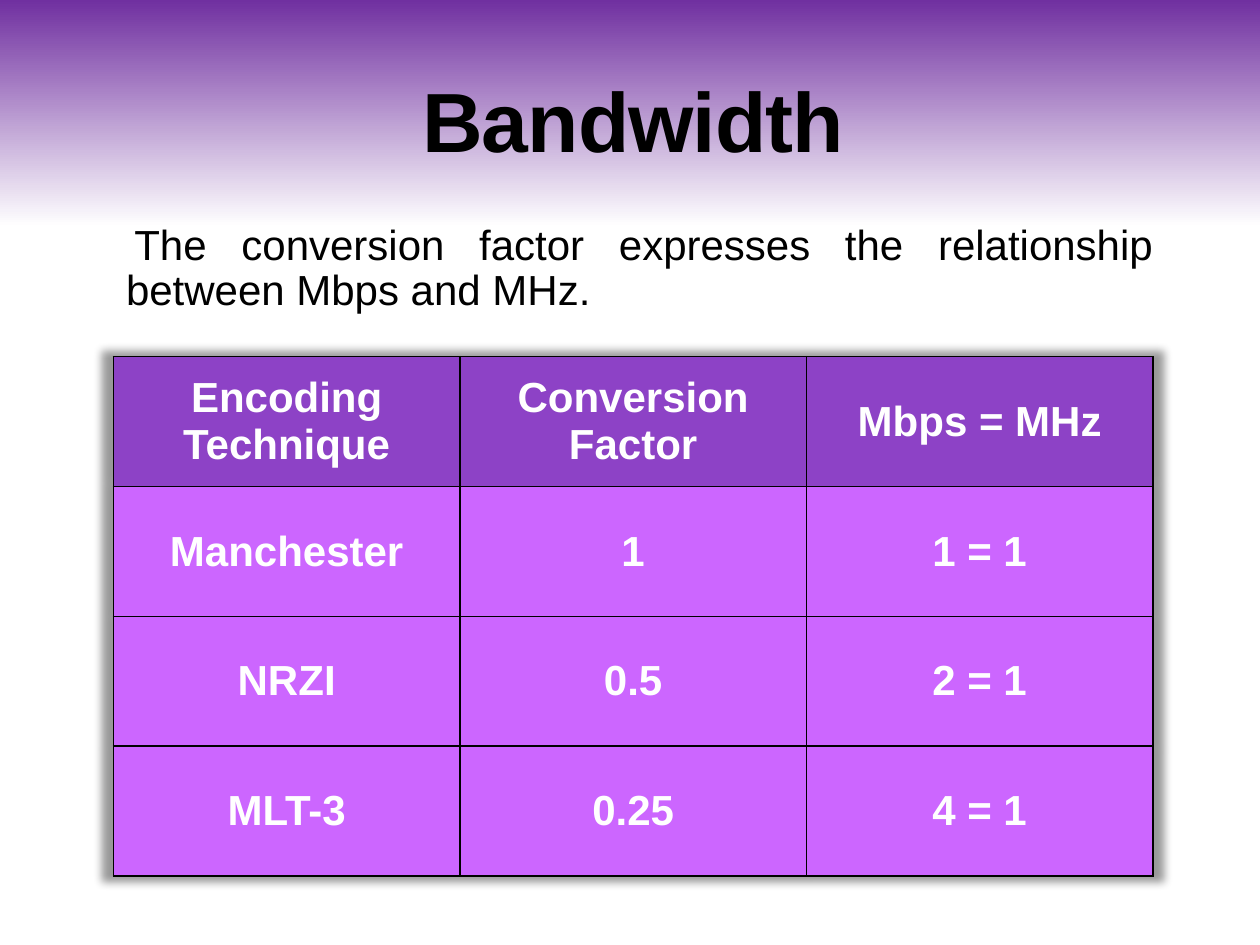
from lxml.etree import SubElement
from pptx import Presentation
from pptx.dml.color import RGBColor
from pptx.enum.text import MSO_ANCHOR, MSO_AUTO_SIZE, PP_ALIGN
from pptx.oxml import parse_xml
from pptx.oxml.ns import nsdecls, qn
from pptx.util import Pt

TITLE = "Bandwidth"
INTRO = "The conversion factor expresses the relationship between Mbps and MHz."
ROWS = [
    ("Encoding Technique", "Conversion Factor", "Mbps = MHz"),
    ("Manchester", "1", "1 = 1"),
    ("NRZI", "0.5", "2 = 1"),
    ("MLT-3", "0.25", "4 = 1"),
]

COLORS = {
    "top": "7030A0", "page": "FFFFFF", "text": "000000", "bullet": "99CB38",
    "header": "8D42C6", "body": "CC66FF", "cell_text": "FFFFFF", "border": "000000",
}
LEFT, WIDTH = 64.8, 594
COLUMN_WIDTH, ROW_HEIGHT = WIDTH / len(ROWS[0]), 74.2
TITLE_FONT = {"name": "Arial", "size": Pt(48), "bold": True}
INTRO_FONT = {"name": "Arial", "size": Pt(24), "bold": False}
CELL_FONT = {"name": "Arial", "size": Pt(24), "bold": True}
TITLE_FRAME = {"vertical_anchor": MSO_ANCHOR.BOTTOM, "word_wrap": True,
               "auto_size": MSO_AUTO_SIZE.NONE}
INTRO_FRAME = {"margin_left": 0, "margin_right": 0, "margin_top": Pt(3.6),
               "margin_bottom": Pt(3.6), "word_wrap": True}
TITLE_PARAGRAPH = {"alignment": PP_ALIGN.CENTER, "line_spacing": 0.85}
INTRO_PARAGRAPH = {"alignment": PP_ALIGN.JUSTIFY, "line_spacing": 0.9, "space_after": Pt(2)}
SHADOW = (
    f'<a:effectLst {nsdecls("a")}><a:outerShdw blurRad="63500" sx="102000" sy="102000" '
    'algn="ctr" rotWithShape="0"><a:prstClr val="black"><a:alpha val="40000"/>'
    "</a:prstClr></a:outerShdw></a:effectLst>"
)


def rgb(role):
    return RGBColor.from_string(COLORS[role])


def apply(target, values):
    for name, value in values.items():
        setattr(target, name, value)


def place(shape, top, height):
    apply(shape, {"left": Pt(LEFT), "top": Pt(top), "width": Pt(WIDTH), "height": Pt(height)})


def style_run(paragraph, text, font, color):
    run = paragraph.add_run()
    run.text = text
    apply(run.font, font)
    run.font.color.rgb = rgb(color)
    return run


def paint_background(slide):
    fill = slide.background.fill
    fill.gradient()
    fill.gradient_angle = 270
    for stop, position, role in zip(fill.gradient_stops, (0, 0.24), ("top", "page")):
        stop.position = position
        stop.color.rgb = rgb(role)


def add_title(slide):
    title = slide.shapes.title
    place(title, 32.4, 68.4)
    apply(title.text_frame, TITLE_FRAME)
    paragraph = title.text_frame.paragraphs[0]
    apply(paragraph, TITLE_PARAGRAPH)
    run = style_run(paragraph, TITLE, TITLE_FONT, "text")
    run.font._element.set("spc", "-50")


def add_intro(slide):
    intro = slide.shapes.add_textbox(0, 0, 0, 0)
    place(intro, 124.6, 337.7)
    apply(intro.text_frame, INTRO_FRAME)
    paragraph = intro.text_frame.paragraphs[0]
    apply(paragraph, INTRO_PARAGRAPH)
    properties = paragraph._p.get_or_add_pPr()
    properties.set("marL", str(Pt(7.2)))
    properties.set("indent", str(-Pt(7.2)))
    bullet_color = SubElement(properties, qn("a:buClr"))
    SubElement(bullet_color, qn("a:srgbClr"), val=COLORS["bullet"])
    SubElement(properties, qn("a:buChar"), char=" ")
    style_run(paragraph, INTRO, INTRO_FONT, "text")


def add_borders(cell):
    properties = cell._tc.get_or_add_tcPr()
    for side in ("lnL", "lnR", "lnT", "lnB"):
        line = SubElement(properties, qn(f"a:{side}"), w=str(Pt(1)))
        SubElement(SubElement(line, qn("a:solidFill")), qn("a:srgbClr"), val=COLORS["border"])


def fill_cell(cell, text, role):
    add_borders(cell)
    cell.fill.solid()
    cell.fill.fore_color.rgb = rgb(role)
    cell.vertical_anchor = MSO_ANCHOR.MIDDLE
    paragraph = cell.text_frame.paragraphs[0]
    paragraph.alignment = PP_ALIGN.CENTER
    style_run(paragraph, text, CELL_FONT, "cell_text")


def add_factor_table(slide):
    frame = slide.shapes.add_table(
        len(ROWS), len(ROWS[0]), Pt(LEFT), Pt(203.8), Pt(WIDTH), Pt(ROW_HEIGHT * len(ROWS)))
    table = frame.table
    table.horz_banding = False
    table._tbl.tblPr.insert(0, parse_xml(SHADOW))
    for column in table.columns:
        column.width = Pt(COLUMN_WIDTH)
    for r, texts in enumerate(ROWS):
        table.rows[r].height = Pt(ROW_HEIGHT)
        for c, text in enumerate(texts):
            fill_cell(table.cell(r, c), text, "body" if r else "header")


def main():
    deck = Presentation()
    deck.slide_width, deck.slide_height = Pt(720), Pt(540)
    slide = deck.slides.add_slide(deck.slide_layouts[5])
    paint_background(slide)
    add_title(slide)
    add_intro(slide)
    add_factor_table(slide)
    deck.save("out.pptx")


if __name__ == "__main__":
    main()
